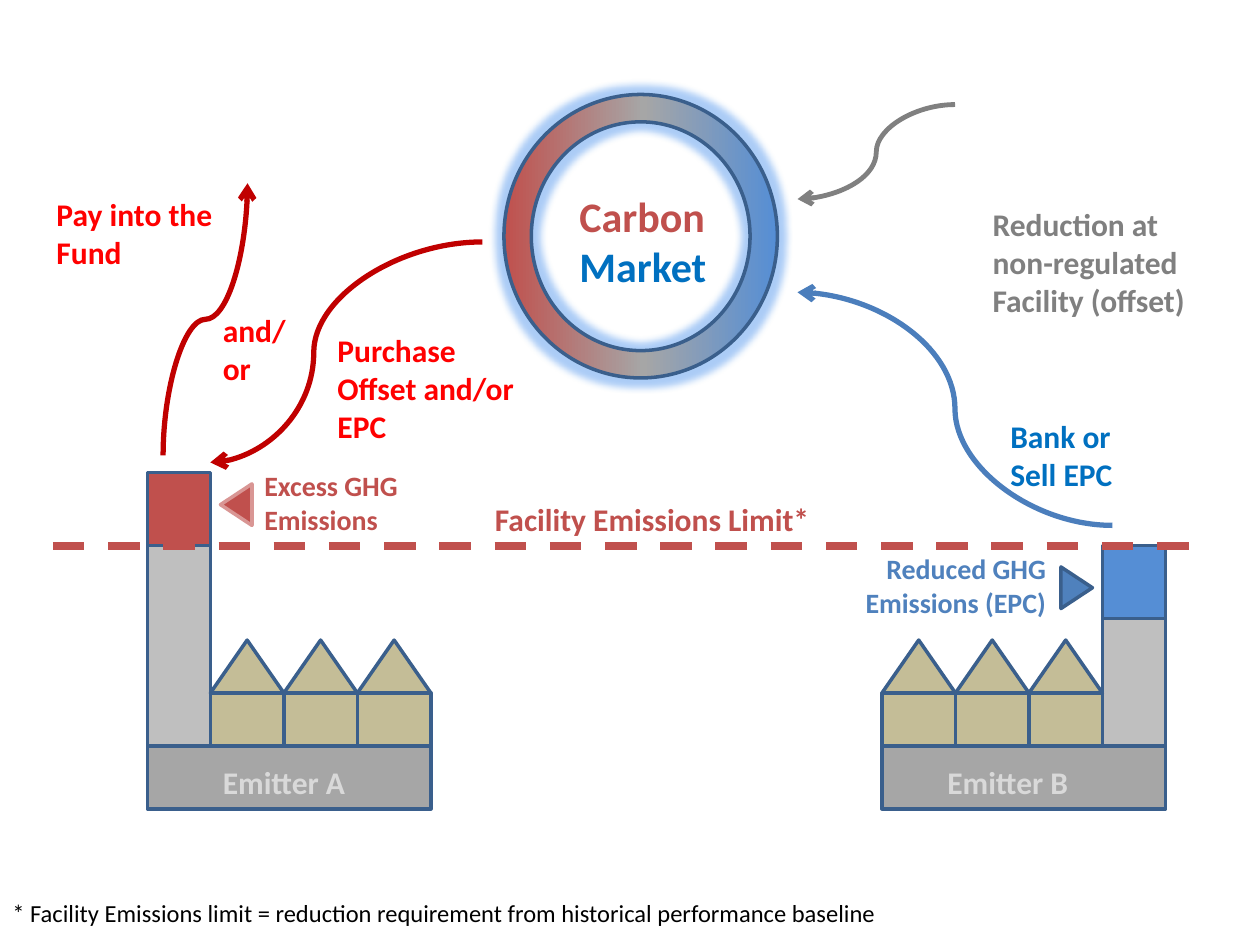
import copy
from dataclasses import dataclass
from typing import Optional

import lxml.etree
import pptx
import pptx.dml.color
import pptx.enum.dml
import pptx.enum.shapes
import pptx.enum.text
import pptx.oxml.ns
import pptx.util

Inches = pptx.util.Inches
Shape = pptx.enum.shapes.MSO_SHAPE
Connector = pptx.enum.shapes.MSO_CONNECTOR
Align = pptx.enum.text.PP_ALIGN
qn = pptx.oxml.ns.qn

OUTLINE = "3A5F8C"
RED = "C0504D"
SKY = "558ED5"
GREY = "A6A6A6"
BEIGE = "C4BD97"
DARK_RED = "C00000"
HALL_WIDTH = 1.75 / 3
HALL_HEIGHT = 0.42


@dataclass
class Label:
    lines: list[str]
    box: tuple[float, float, float, float]
    colors: list[str]
    size: int = 18
    bold: bool = True
    wrap: bool = True
    align: Optional[Align] = None


@dataclass
class Factory:
    left: float
    chimney_left: float
    halls_left: float
    cap_top: float
    chimney_top: float
    cap_color: str
    label: Label


@dataclass
class Curve:
    start: tuple[float, float]
    end: tuple[float, float]
    color: str
    width: float = 3
    bend: float = 0.5
    rotation: int = 0


FACTORIES = [
    Factory(1.17, 1.17, 1.67, 3.75, 4.33, RED,
            Label(["Emitter A"], (1.67, 6.01, 1.42, 0.4), ["D9D9D9"])),
    Factory(7, 8.75, 7, 4.33, 4.83, SKY,
            Label(["Emitter B"], (7.42, 6.01, 1.42, 0.4), ["D9D9D9"])),
]

CURVES = [
    Curve((3.83, 1.92), (1.67, 3.67), DARK_RED, bend=0.62),
    Curve((8.83, 4.17), (6.33, 2.32), "4B7EBC"),
    Curve((7.58, 0.83), (6.33, 1.58), "808080", width=2.75),
    Curve((2.71, 2.87), (0.55, 2.2), DARK_RED, rotation=90),
]

LABELS = [
    Label(["Purchase Offset and/or EPC"], (2.58, 2.58, 1.73, 1.01), ["FF0000"]),
    Label(["Facility Emissions Limit*"], (3.83, 3.92, 3, 0.4), [RED]),
    Label(["* Facility Emissions limit = reduction requirement from historical performance baseline"],
          (0, 7.08, 7.17, 0.34), ["000000"], size=14, bold=False),
    Label(["Reduced GHG", "Emissions (EPC)"], (6.75, 4.33, 1.65, 0.64),
          ["4F81BD"] * 2, size=16, wrap=False, align=Align.RIGHT),
    Label(["Excess GHG", "Emissions"], (2, 3.67, 1.27, 0.64),
          [RED] * 2, size=16, wrap=False),
    Label(["Carbon", "Market"], (4.5, 1.46, 1.28, 0.91),
          [RED, "0070C0"], size=24, wrap=False),
    Label(["Bank or Sell EPC"], (7.92, 3.26, 1.33, 0.71), ["0070C0"]),
    Label(["Reduction at", "non-regulated", "Facility (offset)"],
          (7.78, 1.58, 1.74, 1.01), ["808080"] * 3, wrap=False),
    Label(["Pay into the Fund"], (0.35, 1.5, 1.73, 0.71), ["FF0000"]),
    Label(["and/or"], (1.67, 2.42, 0.77, 0.71), ["FF0000"]),
]


def rgb(value: str) -> pptx.dml.color.RGBColor:
    return pptx.dml.color.RGBColor.from_string(value)


def draw_shape(shapes, kind: Shape, box: tuple, fill: str,
               outline: str = OUTLINE, rotation: float = 0):
    shape = shapes.add_shape(kind, *map(Inches, box))
    shape.shadow.inherit = False
    shape.fill.solid()
    shape.fill.fore_color.rgb = rgb(fill)
    shape.line.color.rgb = rgb(outline)
    shape.line.width = pptx.util.Pt(2)
    shape.rotation = rotation
    return shape


def draw_label(shapes, label: Label) -> None:
    frame = shapes.add_textbox(*map(Inches, label.box)).text_frame
    frame.text = "\n".join(label.lines)
    frame.word_wrap = label.wrap
    frame.auto_size = pptx.enum.text.MSO_AUTO_SIZE.SHAPE_TO_FIT_TEXT
    for paragraph, color in zip(frame.paragraphs, label.colors):
        paragraph.alignment = label.align
        for run in paragraph.runs:
            run.font.name = "Calibri"
            run.font.size = pptx.util.Pt(label.size)
            run.font.bold = label.bold
            run.font.color.rgb = rgb(color)


def draw_factory(shapes, factory: Factory) -> None:
    parts = shapes.add_group_shape().shapes
    chimney, cap = factory.chimney_top, factory.cap_top
    draw_shape(parts, Shape.RECTANGLE,
               (factory.chimney_left, chimney, 0.5, 5.92 - chimney), "BFBFBF")
    draw_shape(parts, Shape.RECTANGLE, (factory.chimney_left, cap, 0.5, 0.58), factory.cap_color)
    draw_shape(parts, Shape.RECTANGLE, (factory.left, 5.92, 2.25, 0.5), GREY)
    for hall in range(3):
        left = factory.halls_left + hall * HALL_WIDTH
        for kind, top in ((Shape.RECTANGLE, 5.5), (Shape.ISOSCELES_TRIANGLE, 5.08)):
            draw_shape(parts, kind, (left, top, HALL_WIDTH, HALL_HEIGHT), BEIGE)
    draw_label(parts, factory.label)


def draw_line(shapes, kind: Connector, start: tuple, end: tuple, color: str, width: float):
    line = shapes.add_connector(kind, *map(Inches, start + end))
    line.line.color.rgb = rgb(color)
    line.line.width = pptx.util.Pt(width)
    lxml.etree.SubElement(line._element.spPr, qn("a:effectLst"))
    return line


def draw_curve(shapes, curve: Curve) -> None:
    line = draw_line(shapes, Connector.CURVE, curve.start, curve.end, curve.color, curve.width)
    properties = line._element.spPr
    lxml.etree.SubElement(properties.find(qn("a:ln")), qn("a:tailEnd"), type="arrow")
    if curve.rotation:
        properties.find(qn("a:xfrm")).set("rot", str(curve.rotation * 60000))
    adjustments = properties.find(qn("a:prstGeom")).get_or_add_avLst()
    lxml.etree.SubElement(adjustments, qn("a:gd"), name="adj1",
                          fmla=f"val {round(curve.bend * 100000)}")


def draw_market_ring(shapes) -> None:
    ring = draw_shape(shapes, Shape.DONUT, (4, 0.75, 2.17, 2.25), GREY)
    ring.adjustments[0] = 0.1
    ring.fill.gradient()
    ring.fill.gradient_angle = 0
    properties = ring._element.spPr
    stop_list = properties.find(".//" + qn("a:gsLst"))
    stop_list.insert(1, copy.deepcopy(stop_list[0]))
    for stop, position, color in zip(ring.fill.gradient_stops, (0, 0.51, 1), (RED, GREY, SKY)):
        stop.position = position
        stop.color.rgb = rgb(color)
    effects = properties.find(qn("a:effectLst"))
    glow = lxml.etree.SubElement(effects, qn("a:glow"), rad=str(Inches(0.11)))
    tint = lxml.etree.SubElement(glow, qn("a:srgbClr"), val="2E80EA")
    lxml.etree.SubElement(tint, qn("a:alpha"), val="40000")


def main() -> None:
    deck = pptx.Presentation()
    deck.slide_width, deck.slide_height = Inches(10), Inches(7.5)
    shapes = deck.slides.add_slide(deck.slide_layouts[6]).shapes

    for factory in FACTORIES:
        draw_factory(shapes, factory)
    draw_shape(shapes, Shape.ISOSCELES_TRIANGLE, (8.38, 4.54, 0.33, 0.25), "4F81BD", rotation=90)
    draw_shape(shapes, Shape.ISOSCELES_TRIANGLE, (1.71, 3.88, 0.33, 0.25), RED, "D99694", 270)
    draw_market_ring(shapes)
    for curve in CURVES:
        draw_curve(shapes, curve)
    limit = draw_line(shapes, Connector.STRAIGHT, (0.42, 4.33), (9.58, 4.33), RED, 4.5)
    limit.line.dash_style = pptx.enum.dml.MSO_LINE.DASH
    for label in LABELS:
        draw_label(shapes, label)

    deck.save("out.pptx")


if __name__ == "__main__":
    main()
